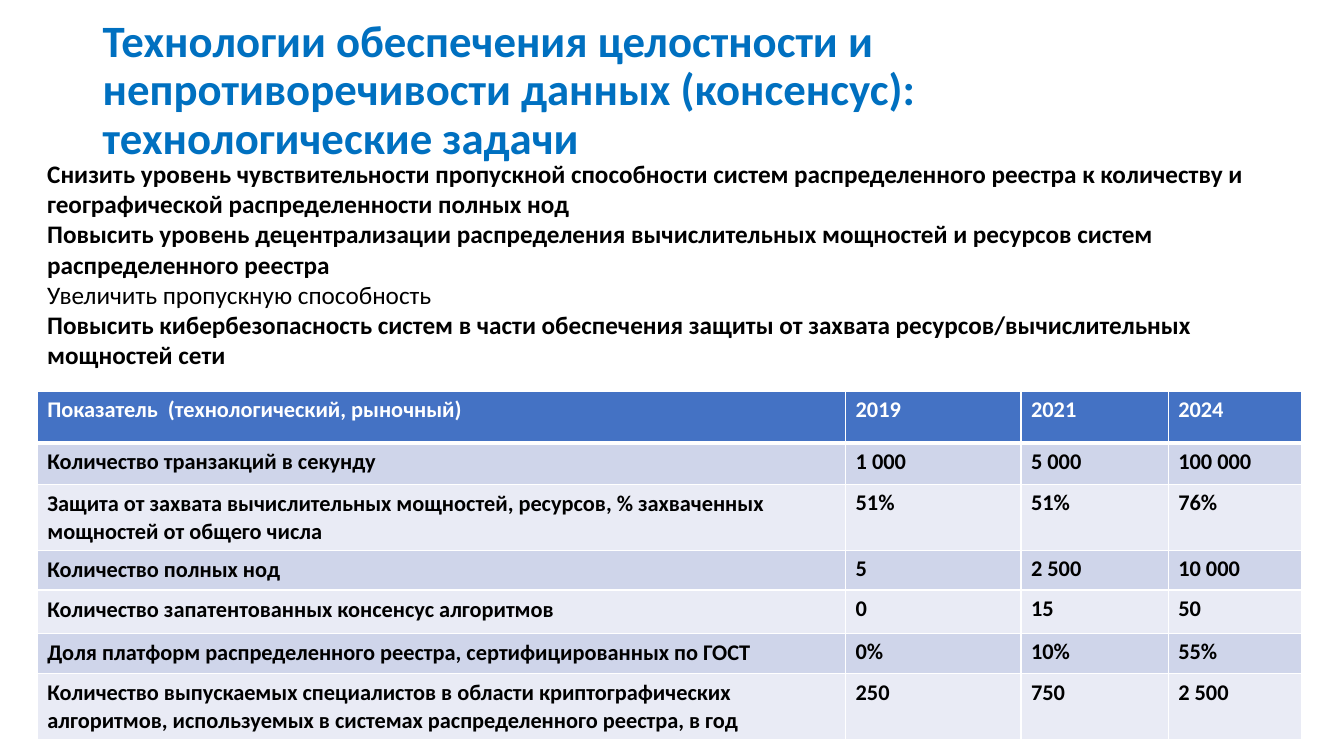
from lxml import etree
from pptx import Presentation
from pptx.dml.color import RGBColor
from pptx.enum import text
from pptx.oxml import ns
from pptx.util import Cm, Pt

FONT = "Calibri"
BLUE = RGBColor(0x00, 0x70, 0xC0)
BLACK = RGBColor(0x00, 0x00, 0x00)
WHITE = RGBColor(0xFF, 0xFF, 0xFF)
HEADER = RGBColor(0x44, 0x72, 0xC4)
BANDS = [RGBColor(0xCF, 0xD5, 0xEA), RGBColor(0xE9, 0xEB, 0xF5)]

TITLE = "Технологии обеспечения целостности и непротиворечивости данных (консенсус): технологические задачи"
TASKS = [
    ("Снизить уровень чувствительности пропускной способности систем распределенного реестра к количеству и географической распределенности полных нод", True),
    ("Повысить уровень децентрализации распределения вычислительных мощностей и ресурсов систем распределенного реестра", True),
    ("Увеличить пропускную способность", False),
    ("Повысить кибербезопасность систем в части обеспечения защиты от захвата ресурсов/вычислительных мощностей сети", True),
]
ROWS = [
    ("Показатель  (технологический, рыночный)", "2019", "2021", "2024"),
    ("Количество транзакций в секунду", "1 000", "5 000", "100 000"),
    ("Защита от захвата вычислительных мощностей, ресурсов, % захваченных мощностей от общего числа", "51%", "51%", "76%"),
    ("Количество полных нод", "5", "2 500", "10 000"),
    ("Количество запатентованных консенсус алгоритмов", "0", "15", "50"),
    ("Доля платформ распределенного реестра, сертифицированных по ГОСТ", "0%", "10%", "55%"),
    ("Количество выпускаемых специалистов в области криптографических алгоритмов, используемых в системах распределенного реестра, в год", "250", "750", "2 500"),
]
COL_WIDTHS = [20.37, 4.42, 3.71, 3.35]
ROW_HEIGHTS = [1.3, 1.04, 1.65, 1, 1.09, 1.02, 1.65]


def write(p, content, size=16, color=BLACK, bold=True, spacing=None):
    r = p.add_run()
    r.text = content
    r.font.name = FONT
    r.font.size = Pt(size)
    r.font.bold = bold
    r.font.color.rgb = color
    if spacing:
        p.line_spacing = spacing


def add_box(slide, left, top, width, height, anchor=text.MSO_ANCHOR.TOP):
    tf = slide.shapes.add_textbox(Cm(left), Cm(top), Cm(width), Cm(height)).text_frame
    tf.word_wrap = True
    tf.vertical_anchor = anchor
    return tf


def set_borders(cell, **widths):
    tc_pr = cell._tc.get_or_add_tcPr()
    for i, side in enumerate("LRTB"):
        ln = etree.Element(ns.qn(f"a:ln{side}"), w=str(Pt(widths.get(side, 1))))
        fill = etree.SubElement(ln, ns.qn("a:solidFill"))
        etree.SubElement(fill, ns.qn("a:srgbClr"), val=str(WHITE))
        tc_pr.insert(i, ln)


def fill_cell(cell, content, row, col):
    header = row == 0
    cell.fill.solid()
    cell.fill.fore_color.rgb = HEADER if header else BANDS[(row - 1) % 2]
    spacing = Pt(20) if col == 0 and not header else None
    write(cell.text_frame.paragraphs[0], content,
          color=WHITE if header else BLACK, spacing=spacing)
    set_borders(cell, B=3 if header else 1, T=3 if row == 1 else 1)


def add_indicators(slide, left, top):
    table = slide.shapes.add_table(
        len(ROWS), len(COL_WIDTHS), Cm(left), Cm(top),
        Cm(sum(COL_WIDTHS)), Cm(sum(ROW_HEIGHTS))).table
    for col, width in zip(table.columns, COL_WIDTHS):
        col.width = Cm(width)
    for row, height in zip(table.rows, ROW_HEIGHTS):
        row.height = Cm(height)
    for i, values in enumerate(ROWS):
        for j, value in enumerate(values):
            fill_cell(table.cell(i, j), value, i, j)


def main():
    prs = Presentation()
    prs.slide_width, prs.slide_height = Cm(33.87), Cm(19.05)
    slide = prs.slides.add_slide(prs.slide_layouts[6])

    tf = add_box(slide, 2.34, 0.46, 29.21, 3.68, text.MSO_ANCHOR.MIDDLE)
    write(tf.paragraphs[0], TITLE, size=32, color=BLUE, spacing=0.9)

    tf = add_box(slide, 0.94, 3.86, 32.23, 6.4)
    for i, (task, bold) in enumerate(TASKS):
        p = tf.add_paragraph() if i else tf.paragraphs[0]
        write(p, task, size=18, bold=bold)

    add_indicators(slide, 0.94, 9.86)
    prs.save("out.pptx")


if __name__ == "__main__":
    main()
